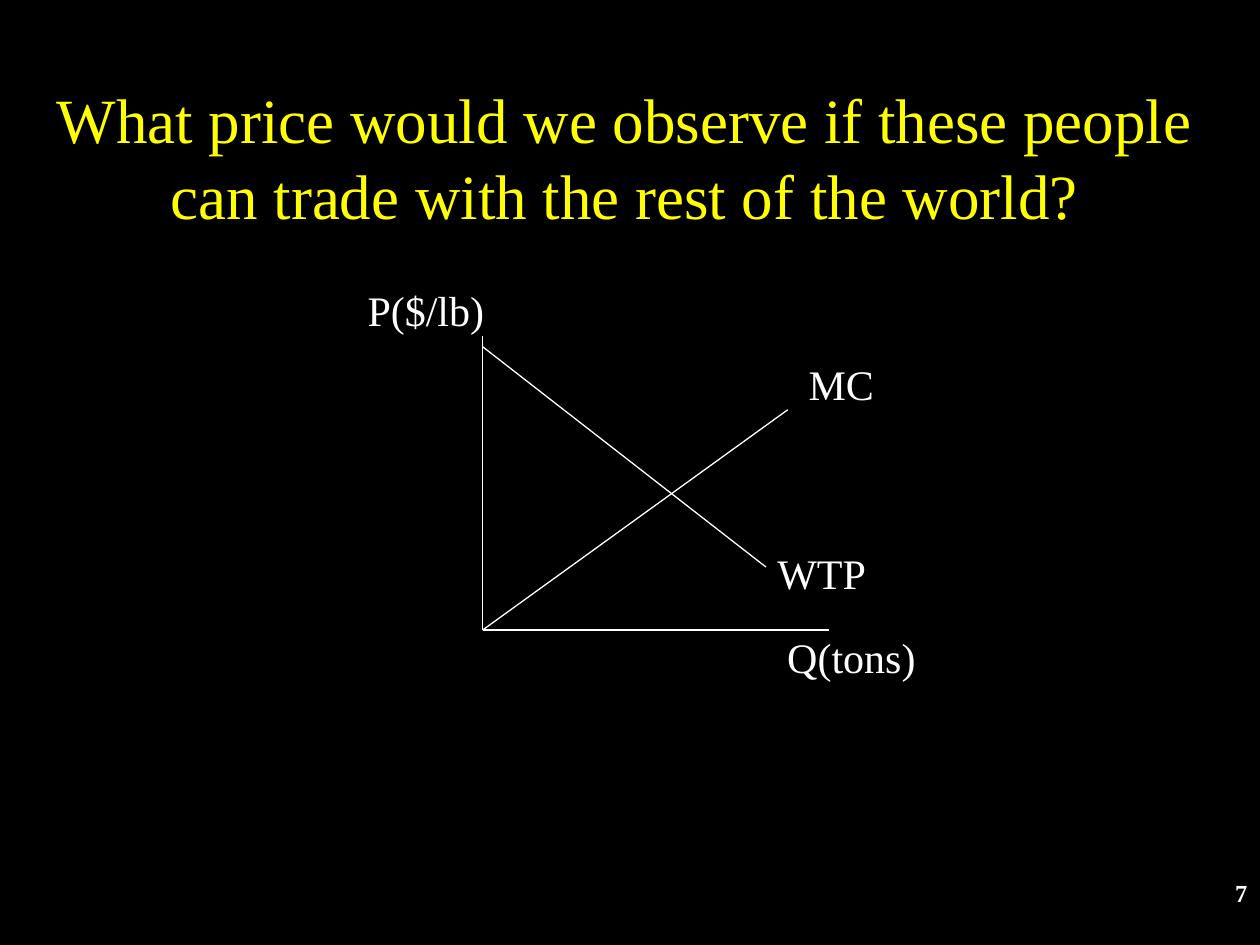
"""Build a supply and demand slide: marginal cost against willingness to pay."""
from lxml.etree import SubElement
from pptx import Presentation
from pptx.dml.color import RGBColor
from pptx.enum.shapes import MSO_CONNECTOR as Connector
from pptx.enum.text import MSO_ANCHOR as Anchor, MSO_AUTO_SIZE as AutoSize, PP_ALIGN as Align
from pptx.oxml.ns import qn
from pptx.util import Cm, Pt

COLORS = {"background": "000000", "title": "FFFF00", "ink": "FFFFFF"}
FONT = "Times New Roman"
TITLE = "What price would we observe if these people can trade with the rest of the world?"
PAGE_NUMBER = "7"

ORIGIN = (9.73, 12.7)
LINES = {
    "price axis": ((ORIGIN[0], 6.78), ORIGIN),
    "quantity axis": (ORIGIN, (16.71, ORIGIN[1])),
    "marginal cost": (ORIGIN, (15.88, 8.26)),
    "willingness to pay": ((ORIGIN[0], 6.99), (15.44, 11.43)),
}
LABEL_HEIGHT = 1.27
LABELS = [
    ("P($/lb)", 7.16, 5.61, 2.87),
    ("Q(tons)", 15.62, 12.6, 3.1),
    ("MC", 16.05, 7.11, 1.83),
    ("WTP", 15.42, 10.92, 2.29),
]


def rgb(name):
    return RGBColor.from_string(COLORS[name])


def add_text(slide, text, box, size=24, color="ink", bold=False,
             align=Align.LEFT, anchor=Anchor.TOP, wrap=True):
    frame = slide.shapes.add_textbox(*map(Cm, box)).text_frame
    frame.word_wrap = wrap
    frame.auto_size = AutoSize.NONE if wrap else AutoSize.SHAPE_TO_FIT_TEXT
    frame.vertical_anchor = anchor
    paragraph = frame.paragraphs[0]
    paragraph.alignment = align
    run = paragraph.add_run()
    run.text = text
    run.font.name, run.font.size, run.font.bold = FONT, Pt(size), bold
    run.font.color.rgb = rgb(color)


def add_line(slide, start, end):
    line = slide.shapes.add_connector(Connector.STRAIGHT, *map(Cm, start + end))
    line.line.color.rgb = rgb("ink")
    line.line.width = Pt(0.75)
    SubElement(line._element.spPr, qn("a:effectLst"))


def main():
    deck = Presentation()
    deck.slide_width, deck.slide_height = Cm(25.4), Cm(19.05)
    slide = deck.slides.add_slide(deck.slide_layouts[6])
    slide.background.fill.solid()
    slide.background.fill.fore_color.rgb = rgb("background")

    add_text(slide, TITLE, (0.84, 1.78, 23.5, 2.74), size=36, color="title",
             align=Align.CENTER, anchor=Anchor.MIDDLE)
    for start, end in LINES.values():
        add_line(slide, start, end)
    for label, left, top, width in LABELS:
        add_text(slide, label, (left, top, width, LABEL_HEIGHT), wrap=False)
    add_text(slide, PAGE_NUMBER, (22.23, 17.58, 3.17, 0.84), size=14, bold=True,
             align=Align.RIGHT)
    deck.save("out.pptx")


if __name__ == "__main__":
    main()
